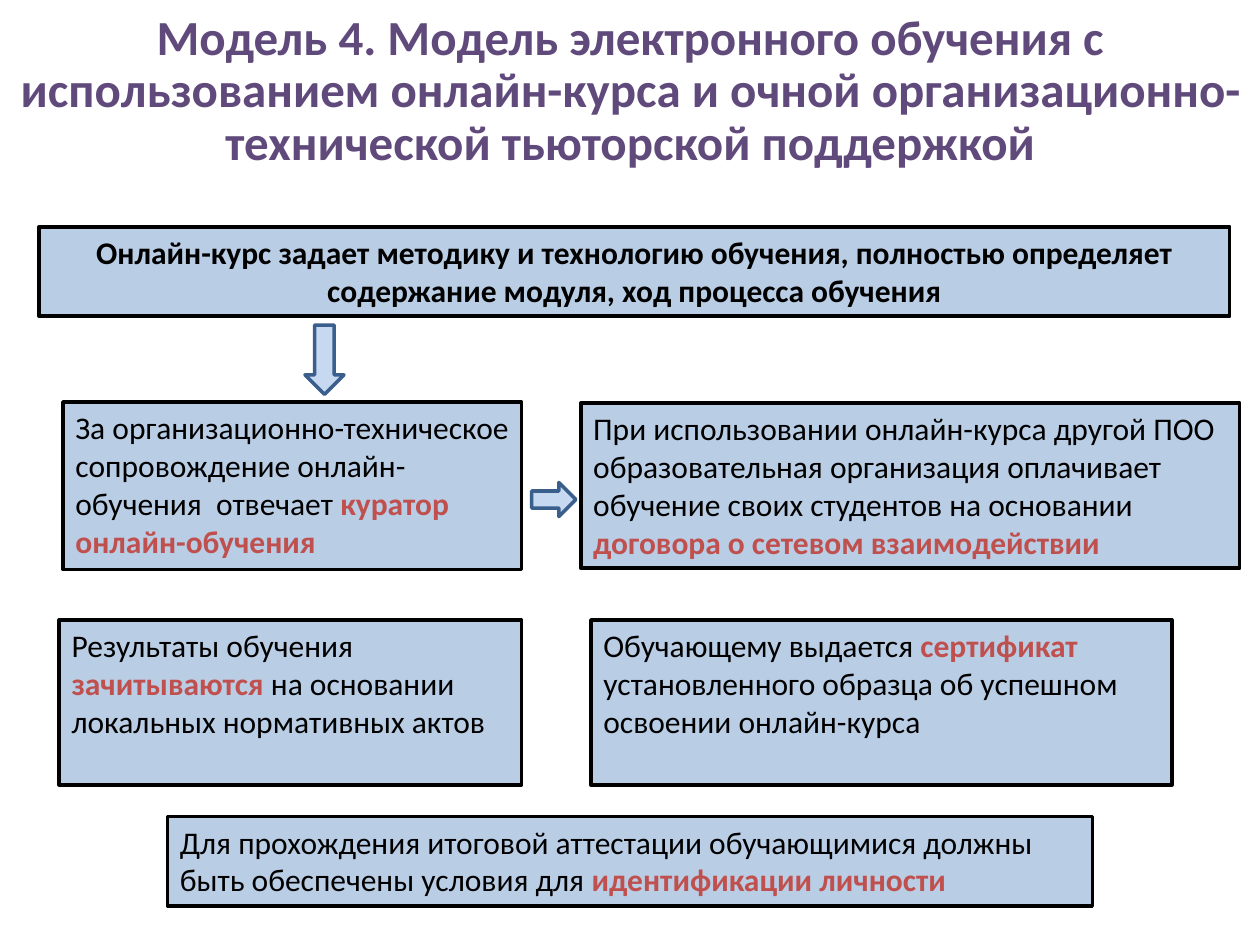
from pptx import Presentation
from pptx.dml.color import RGBColor
from pptx.enum.shapes import MSO_SHAPE
from pptx.enum.text import MSO_ANCHOR, PP_ALIGN
from pptx.util import Inches, Pt

THEME = {
    "font": "Calibri",
    "title": {"size": 28, "color": "604A7B", "bold": True},
    "plain": {"size": 18, "color": "000000", "bold": False},
    "strong": {"size": 18, "color": "000000", "bold": True},
    "accent": {"size": 18, "color": "C0504D", "bold": True},
    "box": {"fill": "B9CDE5", "line": "000000"},
    "arrow": {"fill": "C6D9F1", "line": "3A5F8C"},
    "stroke": 2,
}

TITLE = ("Модель 4. Модель электронного обучения с использованием онлайн-курса "
         "и очной организационно-технической тьюторской поддержкой")

# Place (left, top, width, height), alignment, runs (style, text)
BOXES = [
    ((0.31, 1.8, 9.45, 0.71), PP_ALIGN.CENTER, [
        ("strong", "Онлайн-курс задает методику и технологию обучения, "
                   "полностью определяет содержание модуля, ход процесса обучения")]),
    ((0.5, 3.19, 3.64, 1.33), PP_ALIGN.LEFT, [
        ("plain", "За организационно-техническое сопровождение "
                  "онлайн-обучения  отвечает "),
        ("accent", "куратор онлайн-обучения")]),
    ((4.61, 3.2, 5.23, 1.31), PP_ALIGN.LEFT, [
        ("plain", "При использовании онлайн-курса другой ПОО образовательная "
                  "организация оплачивает обучение своих студентов на основании "),
        ("accent", "договора о сетевом взаимодействии")]),
    ((0.47, 4.92, 3.67, 1.31), PP_ALIGN.LEFT, [
        ("plain", "Результаты обучения "),
        ("accent", "зачитываются "),
        ("plain", "на основании локальных нормативных актов")]),
    ((4.69, 4.92, 4.61, 1.31), PP_ALIGN.LEFT, [
        ("plain", "Обучающему выдается "),
        ("accent", "сертификат "),
        ("plain", "установленного образца об успешном освоении онлайн-курса")]),
    ((1.33, 6.48, 7.34, 0.71), PP_ALIGN.LEFT, [
        ("plain", "Для прохождения итоговой аттестации обучающимися должны "
                  "быть обеспечены условия для "),
        ("accent", "идентификации личности")]),
]

ARROWS = [
    (MSO_SHAPE.DOWN_ARROW, (2.42, 2.58, 0.31, 0.55)),
    (MSO_SHAPE.RIGHT_ARROW, (4.22, 3.83, 0.35, 0.27)),
]


def write(frame, runs, align, **layout):
    """Fill a text frame with styled runs; layout holds frame attributes."""
    for name, value in {"word_wrap": True, **layout}.items():
        setattr(frame, name, value)
    para = frame.paragraphs[0]
    para.alignment = align
    for style, text in runs:
        run = para.add_run()
        run.text = text
        look = THEME[style]
        form = {"name": THEME["font"], "size": Pt(look["size"]), "bold": look["bold"]}
        for name, value in form.items():
            setattr(run.font, name, value)
        run.font.color.rgb = RGBColor.from_string(look["color"])
    return para


def draw(slide, kind, place, style):
    shape = slide.shapes.add_shape(kind, *map(Inches, place))
    shape.shadow.inherit = False
    shape.fill.solid()
    shape.fill.fore_color.rgb = RGBColor.from_string(THEME[style]["fill"])
    shape.line.color.rgb = RGBColor.from_string(THEME[style]["line"])
    shape.line.width = Pt(THEME["stroke"])
    return shape


def main():
    deck = Presentation()
    deck.slide_width, deck.slide_height = Inches(10), Inches(7.5)
    slide = deck.slides.add_slide(deck.slide_layouts[6])

    title = slide.shapes.add_textbox(*map(Inches, (0, 0.31, 10, 1.25)))
    # The deep bottom margin lifts the heading towards the slide's top edge
    para = write(title.text_frame, [("title", TITLE)], PP_ALIGN.CENTER,
                 vertical_anchor=MSO_ANCHOR.MIDDLE, margin_bottom=Inches(0.47))
    para.line_spacing = Pt(30)

    for place, align, runs in BOXES:
        box = draw(slide, MSO_SHAPE.RECTANGLE, place, "box")
        write(box.text_frame, runs, align, vertical_anchor=MSO_ANCHOR.TOP)
    for kind, place in ARROWS:
        draw(slide, kind, place, "arrow")

    deck.save("out.pptx")


if __name__ == "__main__":
    main()
